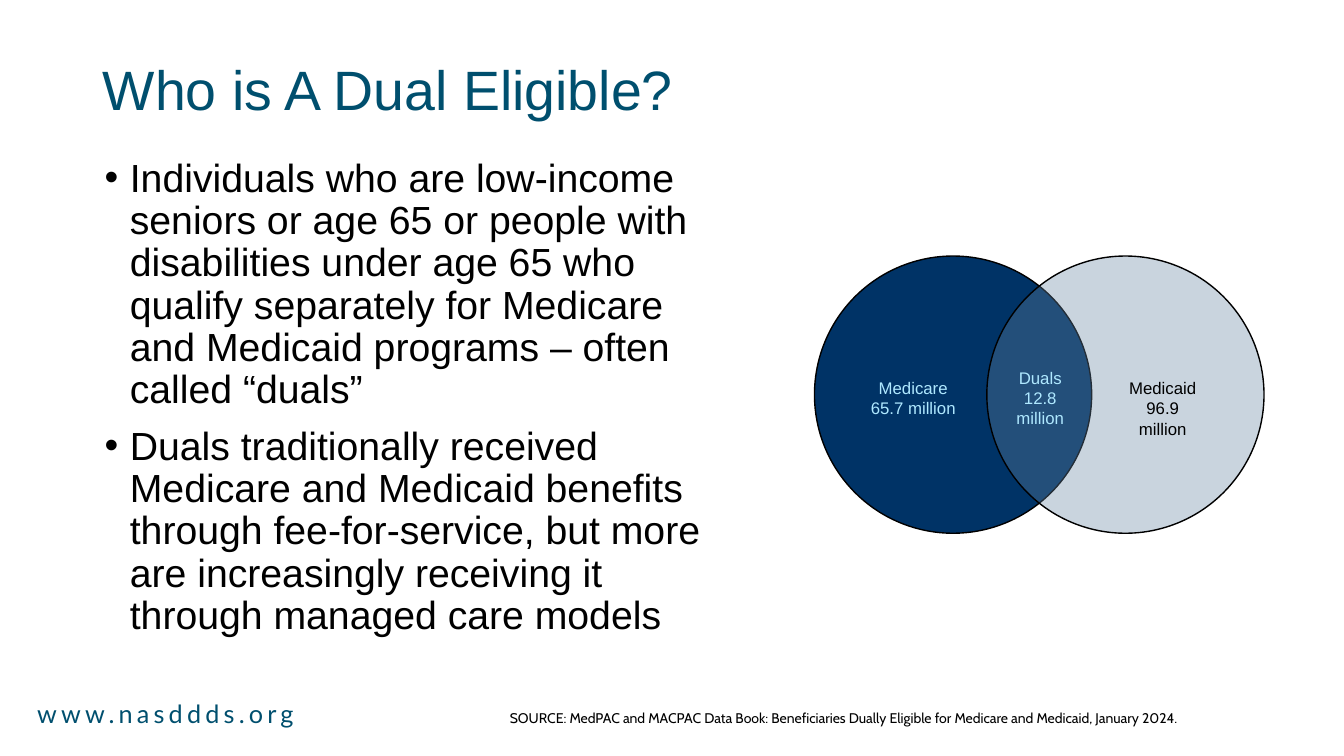
import pptx
import pptx.dml.color
import pptx.enum.shapes
import pptx.enum.text
import pptx.util
from lxml import etree
from pptx.oxml.ns import qn

ANCHOR = pptx.enum.text.MSO_ANCHOR
ALIGN = pptx.enum.text.PP_ALIGN

THEME = {
    "colors": {"heading": "004F6E", "ink": "000000", "pale": "AFE8FF",
               "medicare": "003366", "medicaid": "6685A2"},
    "sizes": {"title": 39.6, "body": 28, "site": 18, "label": 12, "source": 10},
    "fonts": {"main": "Arial", "site": "Lato", "source": "Cabin"},
}

SLIDE_SIZE = (13.33, 7.5)
GRID = (40, 30)

TITLE = "Who is A Dual Eligible?"
TITLE_AREA = (2.76, 2.28, 34.5, 3.8)

POINTS = [
    "Individuals who are low-income seniors or age 65 or people with disabilities under age 65 "
    "who qualify separately for Medicare and Medicaid programs – often called “duals”",
    "Duals traditionally received Medicare and Medicaid benefits through fee-for-service, "
    "but more are increasingly receiving it through managed care models",
]
POINTS_AREA = (2.82, 6.08, 18.75, 23.24)

VENN_START, VENN_TOP, VENN_STEP = 24.24, 10.16, 5.13
DIAMETER = (8.25, 11)
CIRCLES = [("medicare", 100), ("medicaid", 35)]

CAPTIONS = [
    {"lines": ["www.nasddds.org"], "area": (0.81, 27.52, 21.9, 1.6),
     "size": "site", "font": "site", "color": "heading",
     "frame": {"vertical_anchor": ANCHOR.BOTTOM}, "spacing": 3},
    {"lines": ["Medicare", "65.7 million"], "area": (25.53, 14.8, 3.3, 2),
     "color": "pale", "frame": {"word_wrap": False}},
    {"lines": ["Medicaid 96.9 million"], "area": (33.09, 14.8, 3.03, 2.84)},
    {"lines": ["Duals 12.8", "million"], "area": (29.85, 14.4, 2.22, 2.84),
     "color": "pale"},
    {"lines": ["SOURCE: MedPAC and MACPAC Data Book: Beneficiaries Dually Eligible "
               "for Medicare and Medicaid, January 2024."],
     "area": (14.88, 27.96, 22.35, 1.08), "size": "source", "font": "source",
     "align": ALIGN.LEFT},
]
CAPTIONS[0]["align"] = ALIGN.LEFT


def apply(target, values):
    for key, value in values.items():
        setattr(target, key, value)


def place(area):
    return [pptx.util.Inches(share * SLIDE_SIZE[i % 2] / GRID[i % 2])
            for i, share in enumerate(area)]


def rgb(name):
    return pptx.dml.color.RGBColor.from_string(THEME["colors"][name])


def add_bullet(paragraph):
    properties = paragraph._p.get_or_add_pPr()
    indent = pptx.util.Inches(0.25)
    properties.set("marL", str(indent))
    properties.set("indent", str(-indent))
    etree.SubElement(properties, qn("a:buFont")).set("typeface", "Arial")
    etree.SubElement(properties, qn("a:buChar")).set("char", "•")


def write(frame, lines, size="label", font="main", color="ink", align=ALIGN.LEFT,
          leading=1.0, gap=0, bulleted=False, spacing=0, settings=None):
    apply(frame, {"word_wrap": True, "vertical_anchor": ANCHOR.TOP,
                  "auto_size": pptx.enum.text.MSO_AUTO_SIZE.NONE, **(settings or {})})
    for index, line in enumerate(lines):
        paragraph = frame.add_paragraph() if index else frame.paragraphs[0]
        if bulleted:
            add_bullet(paragraph)
        apply(paragraph, {"alignment": align, "line_spacing": leading,
                          "space_before": pptx.util.Pt(gap if index else 0)})
        run = paragraph.add_run()
        run.text = line
        apply(run.font, {"size": pptx.util.Pt(THEME["sizes"][size]),
                         "name": THEME["fonts"][font]})
        run.font.color.rgb = rgb(color)
        if spacing:
            run.font._element.set("spc", str(spacing * 100))


def add_circle(slide, index, color, opacity):
    area = (VENN_START + index * VENN_STEP, VENN_TOP, *DIAMETER)
    circle = slide.shapes.add_shape(pptx.enum.shapes.MSO_SHAPE.OVAL, *place(area))
    circle.shadow.inherit = False
    circle.fill.solid()
    circle.fill.fore_color.rgb = rgb(color)
    circle.line.color.rgb = rgb("ink")
    circle.line.width = pptx.util.Pt(1)
    if opacity < 100:
        fill_color = circle._element.spPr.find(qn("a:solidFill"))[0]
        etree.SubElement(fill_color, qn("a:alpha")).set("val", str(opacity * 1000))


def main():
    deck = pptx.Presentation()
    apply(deck, {"slide_width": pptx.util.Inches(SLIDE_SIZE[0]),
                 "slide_height": pptx.util.Inches(SLIDE_SIZE[1])})
    slide = deck.slides.add_slide(deck.slide_layouts[5])

    heading = slide.shapes.title
    apply(heading, dict(zip(("left", "top", "width", "height"), place(TITLE_AREA))))
    write(heading.text_frame, [TITLE], "title", color="heading", leading=0.9)

    points = slide.shapes.add_textbox(*place(POINTS_AREA))
    write(points.text_frame, POINTS, "body", leading=0.9, gap=10, bulleted=True)

    for index, (color, opacity) in enumerate(CIRCLES):
        add_circle(slide, index, color, opacity)

    for caption in CAPTIONS:
        label = slide.shapes.add_textbox(*place(caption["area"]))
        write(label.text_frame, caption["lines"], caption.get("size", "label"),
              caption.get("font", "main"), caption.get("color", "ink"),
              caption.get("align", ALIGN.CENTER), spacing=caption.get("spacing", 0),
              settings=caption.get("frame"))

    deck.save("out.pptx")


if __name__ == "__main__":
    main()
